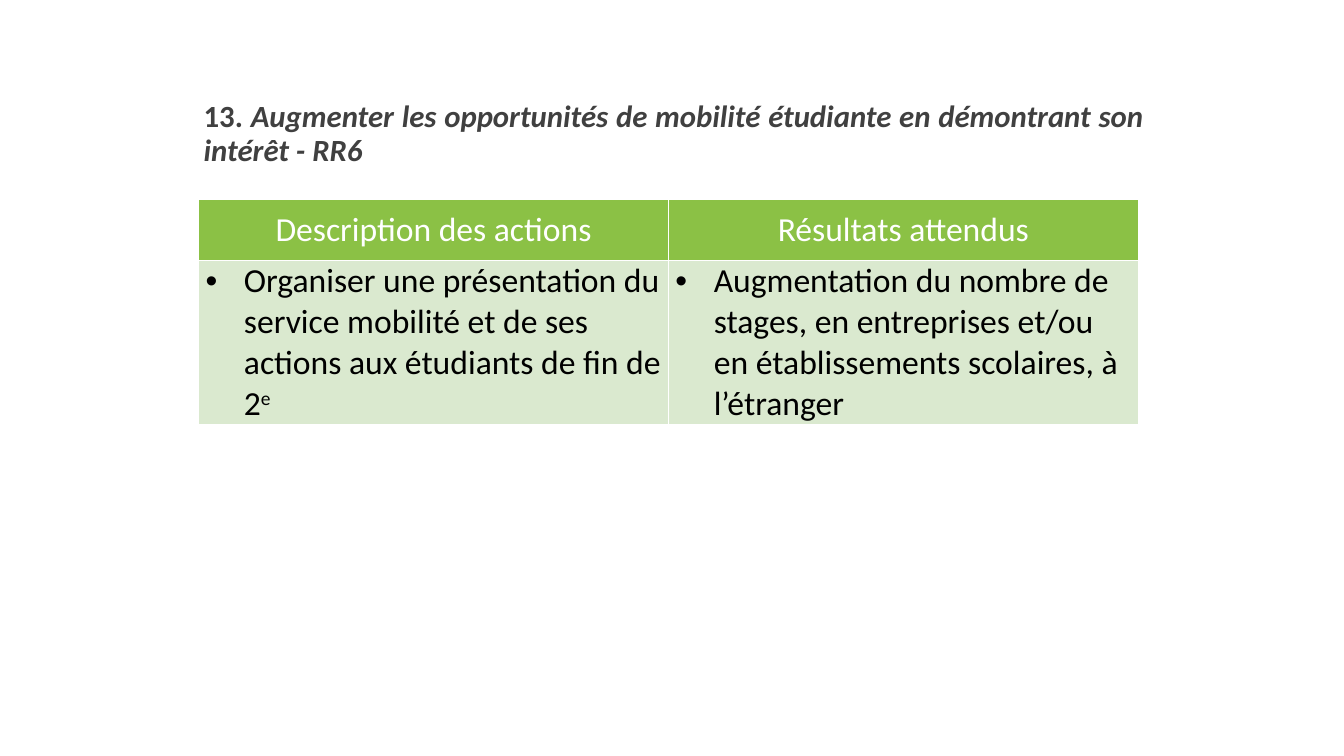
from pptx import Presentation
from pptx.dml.color import RGBColor
from pptx.enum.text import MSO_ANCHOR as Anchor, PP_ALIGN as Align
from pptx.oxml import parse_xml
from pptx.oxml.ns import nsdecls
from pptx.util import Inches, Pt

# Content: each text is a list of (words, format) runs
HEADING = [
    ("13. ", {}),
    ("Augmenter les opportunités de mobilité étudiante en démontrant son intérêt - RR6",
     {"italic": True}),
]
HEADERS = [[("Description des actions", {})], [("Résultats attendus", {})]]
ACTIONS = [
    [("Organiser une présentation du service mobilité et de ses actions "
      "aux étudiants de fin de 2", {}), ("e", {"superscript": True})],
    [("Augmentation du nombre de stages, en entreprises et/ou en établissements "
      "scolaires, à l’étranger", {})],
]

# Formats
HEADING_FONT = {"name": "Calibri", "size": Pt(22), "bold": True}
TABLE_FONT = {"name": "Calibri", "size": Pt(24), "bold": False}
ROW_STYLES = [
    {"height": 0.6, "fill": "8BC145", "color": "FFFFFF", "insets": (0.1, 0.1), "bullet": False},
    {"height": 1.6, "fill": "DAE9CF", "color": "000000", "insets": (0.07, 0), "bullet": True},
]
COLUMN_WIDTH = 4.66


def rgb(value):
    return RGBColor.from_string(value)


def write_runs(paragraph, runs, base_format, color):
    for words, extra in runs:
        run = paragraph.add_run()
        run.text = words
        for key, value in {**base_format, **extra}.items():
            if key == "superscript":
                run._r.get_or_add_rPr().set("baseline", "30000")
            else:
                setattr(run.font, key, value)
        run.font.color.rgb = rgb(color)


def add_bullet(paragraph):
    properties = paragraph._p.get_or_add_pPr()
    indent = Inches(0.38)
    properties.set("marL", str(indent))
    properties.set("indent", str(-indent))
    for xml in (f'<a:buFont {nsdecls("a")} typeface="Arial"/>',
                f'<a:buChar {nsdecls("a")} char="•"/>'):
        properties.append(parse_xml(xml))


def add_borders(cell):
    for side in "LRTB":
        cell._tc.get_or_add_tcPr().append(parse_xml(
            f'<a:ln{side} {nsdecls("a")} w="{Pt(1)}"><a:solidFill>'
            f'<a:srgbClr val="FFFFFF"/></a:solidFill></a:ln{side}>'))


def fill_cell(cell, runs, style):
    add_borders(cell)
    cell.fill.solid()
    cell.fill.fore_color.rgb = rgb(style["fill"])
    side, end = map(Inches, style["insets"])
    cell.margin_left = cell.margin_right = side
    cell.margin_top = cell.margin_bottom = end
    paragraph = cell.text_frame.paragraphs[0]
    if style["bullet"]:
        add_bullet(paragraph)
    else:
        paragraph.alignment = Align.CENTER
    write_runs(paragraph, runs, TABLE_FONT, style["color"])


def main():
    deck = Presentation()
    deck.slide_width, deck.slide_height = Inches(13.33), Inches(7.5)
    slide = deck.slides.add_slide(deck.slide_layouts[5])

    # Heading
    heading = slide.shapes.title
    heading.left, heading.top = Inches(1.92), Inches(0.75)
    heading.width, heading.height = Inches(9.52), Inches(1.17)
    heading.text_frame.vertical_anchor = Anchor.MIDDLE
    paragraph = heading.text_frame.paragraphs[0]
    paragraph.alignment = Align.JUSTIFY
    paragraph.line_spacing = 0.9
    write_runs(paragraph, HEADING, HEADING_FONT, "404040")

    # Table of actions and expected results
    rows = [HEADERS, ACTIONS]
    height = sum(style["height"] for style in ROW_STYLES)
    table = slide.shapes.add_table(
        len(rows), len(HEADERS), Inches(1.97), Inches(1.98),
        Inches(COLUMN_WIDTH * len(HEADERS)), Inches(height)).table
    for column in table.columns:
        column.width = Inches(COLUMN_WIDTH)
    for row, texts, style in zip(table.rows, rows, ROW_STYLES):
        row.height = Inches(style["height"])
        for cell, runs in zip(row.cells, texts):
            fill_cell(cell, runs, style)

    deck.save("out.pptx")


if __name__ == "__main__":
    main()
